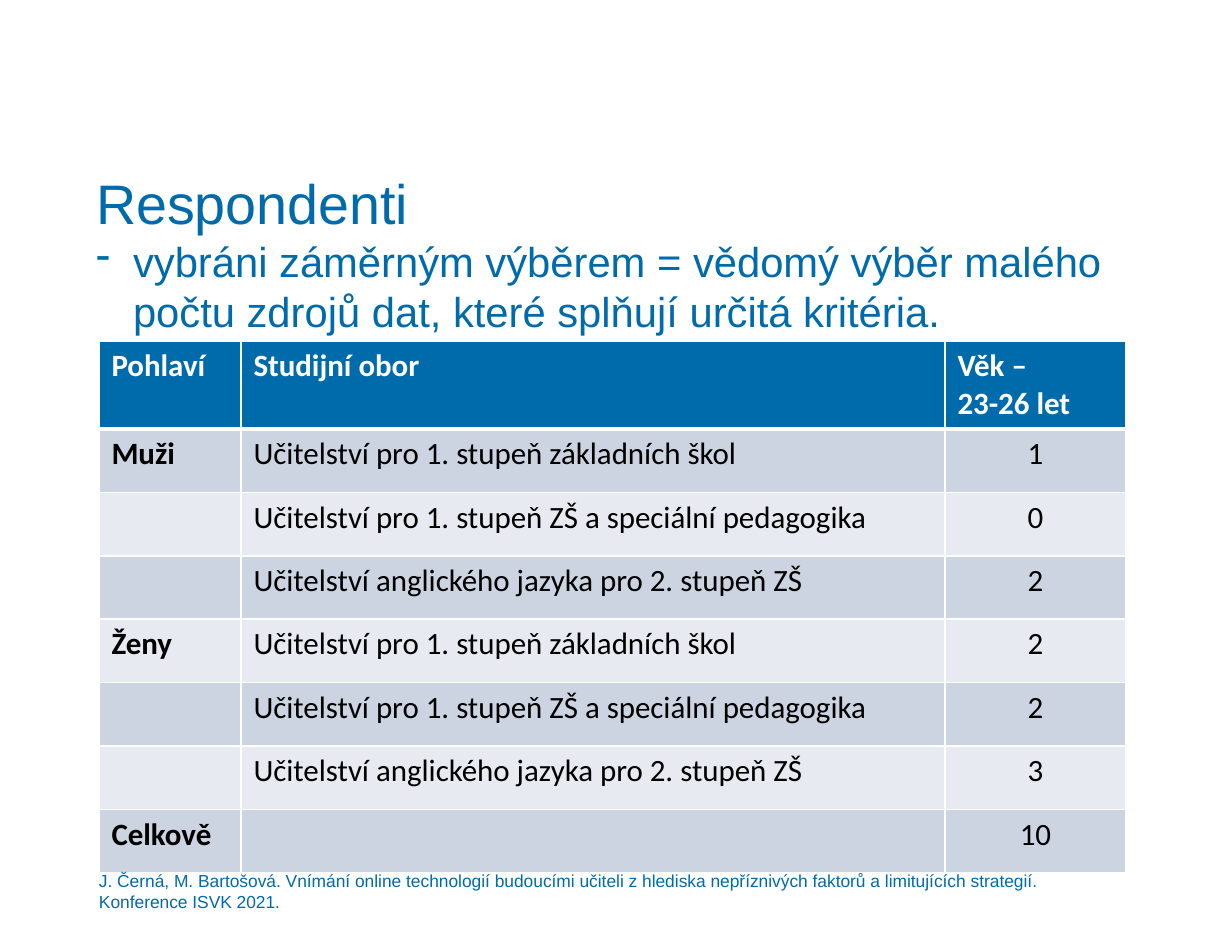
"""Builds the slide about respondents and their fields of study."""
from dataclasses import dataclass

from lxml import etree
from pptx import Presentation
from pptx.dml.color import RGBColor
from pptx.enum.text import MSO_ANCHOR, PP_ALIGN
from pptx.oxml.ns import qn
from pptx.slide import Slide
from pptx.table import _Cell
from pptx.text.text import TextFrame, _Paragraph
from pptx.util import Emu, Pt

EMU_PER_PX = 7304
BLANK_LAYOUT = 6
BLUE = RGBColor(0x00, 0x6B, 0xAB)
WHITE = RGBColor(0xFF, 0xFF, 0xFF)
BLACK = RGBColor(0x00, 0x00, 0x00)
BANDS = (RGBColor(0xCC, 0xD4, 0xE2), RGBColor(0xE7, 0xEB, 0xF1))
TOP, BOTTOM = MSO_ANCHOR.TOP, MSO_ANCHOR.BOTTOM
LEFT, CENTER = PP_ALIGN.LEFT, PP_ALIGN.CENTER

COLUMN_WIDTHS = (142, 704, 181)
HEADER_HEIGHT = 88
BODY_HEIGHT = 444
BULLET_INDENT = 37
TABLE_LEFT, TABLE_TOP = 99, 341


@dataclass(frozen=True)
class TextBox:
    left: int
    top: int
    width: int
    height: int
    text: str
    sizes: tuple[int, ...]
    anchor: MSO_ANCHOR = TOP


@dataclass(frozen=True)
class Row:
    gender: str
    field: str
    age: str


PRIMARY = "Učitelství pro 1. stupeň základních škol"
SPECIAL = "Učitelství pro 1. stupeň ZŠ a speciální pedagogika"
ENGLISH = "Učitelství anglického jazyka pro 2. stupeň ZŠ"

HEADER = Row("Pohlaví", "Studijní obor", "Věk –\n23-26 let")
RESPONDENTS = (
    Row("Muži", PRIMARY, "1"),
    Row("", SPECIAL, "0"),
    Row("", ENGLISH, "2"),
    Row("Ženy", PRIMARY, "2"),
    Row("", SPECIAL, "2"),
    Row("", ENGLISH, "3"),
    Row("Celkově", "", "10"),
)
INTRODUCTION = TextBox(
    96, 169, 1092, 699,
    "Respondenti\nvybráni záměrným výběrem = vědomý výběr malého počtu zdrojů dat, "
    "které splňují určitá kritéria.",
    (32, 24),
)
CITATION = TextBox(
    99, 882, 975, 30,
    "J. Černá, M. Bartošová. Vnímání online technologií budoucími učiteli z hlediska "
    "nepříznivých faktorů a limitujících strategií. Konference ISVK 2021.",
    (10,), anchor=BOTTOM,
)


def px(length: int) -> Emu:
    return Emu(length * EMU_PER_PX)


def format_runs(paragraph: _Paragraph, font: str, size: float, color: RGBColor, bold: bool) -> None:
    for run in paragraph.runs:
        run.font.name = font
        run.font.size = Pt(size)
        run.font.color.rgb = color
        run.font.bold = bold


def add_dash(paragraph: _Paragraph) -> None:
    properties = paragraph._p.get_or_add_pPr()
    properties.set("marL", str(px(BULLET_INDENT)))
    properties.set("indent", str(-px(BULLET_INDENT)))
    etree.SubElement(properties, qn("a:buChar")).set("char", "-")


def add_text(slide: Slide, box: TextBox) -> TextFrame:
    shape = slide.shapes.add_textbox(px(box.left), px(box.top), px(box.width), px(box.height))
    frame = shape.text_frame
    frame.word_wrap = True
    frame.vertical_anchor = box.anchor
    frame.margin_left = frame.margin_top = frame.margin_right = frame.margin_bottom = 0
    frame.text = box.text
    for paragraph, size in zip(frame.paragraphs, box.sizes):
        format_runs(paragraph, "Arial", size, BLUE, False)
    return frame


def set_borders(cell: _Cell, top: int, bottom: int) -> None:
    properties = cell._tc.get_or_add_tcPr()
    for side, width in (("L", 1), ("R", 1), ("T", top), ("B", bottom)):
        line = etree.SubElement(properties, qn(f"a:ln{side}"))
        line.set("w", str(Pt(width)))
        fill = etree.SubElement(line, qn("a:solidFill"))
        etree.SubElement(fill, qn("a:srgbClr")).set("val", str(WHITE))


def add_respondents(slide: Slide) -> None:
    rows = (HEADER, *RESPONDENTS)
    table = slide.shapes.add_table(
        len(rows), len(COLUMN_WIDTHS), px(TABLE_LEFT), px(TABLE_TOP),
        px(sum(COLUMN_WIDTHS)), px(HEADER_HEIGHT + BODY_HEIGHT),
    ).table
    for column, width in zip(table.columns, COLUMN_WIDTHS):
        column.width = px(width)
    for row_index, row in enumerate(rows):
        is_header = row_index == 0
        table.rows[row_index].height = (
            px(HEADER_HEIGHT) if is_header else Emu(px(BODY_HEIGHT) // len(RESPONDENTS))
        )
        for column_index, text in enumerate((row.gender, row.field, row.age)):
            cell = table.cell(row_index, column_index)
            set_borders(cell, 3 if row_index == 1 else 1, 3 if is_header else 1)
            cell.fill.solid()
            cell.fill.fore_color.rgb = BLUE if is_header else BANDS[(row_index - 1) % 2]
            cell.text_frame.text = text
            for paragraph in cell.text_frame.paragraphs:
                paragraph.alignment = CENTER if column_index == 2 and not is_header else LEFT
                color = WHITE if is_header else BLACK
                format_runs(paragraph, "Calibri", 17.8, color, is_header or column_index == 0)


def main() -> None:
    presentation = Presentation()
    presentation.slide_width, presentation.slide_height = px(1232), px(936)
    slide = presentation.slides.add_slide(presentation.slide_layouts[BLANK_LAYOUT])
    introduction = add_text(slide, INTRODUCTION)
    add_dash(introduction.paragraphs[1])
    add_respondents(slide)
    add_text(slide, CITATION)
    presentation.save("out.pptx")


if __name__ == "__main__":
    main()
